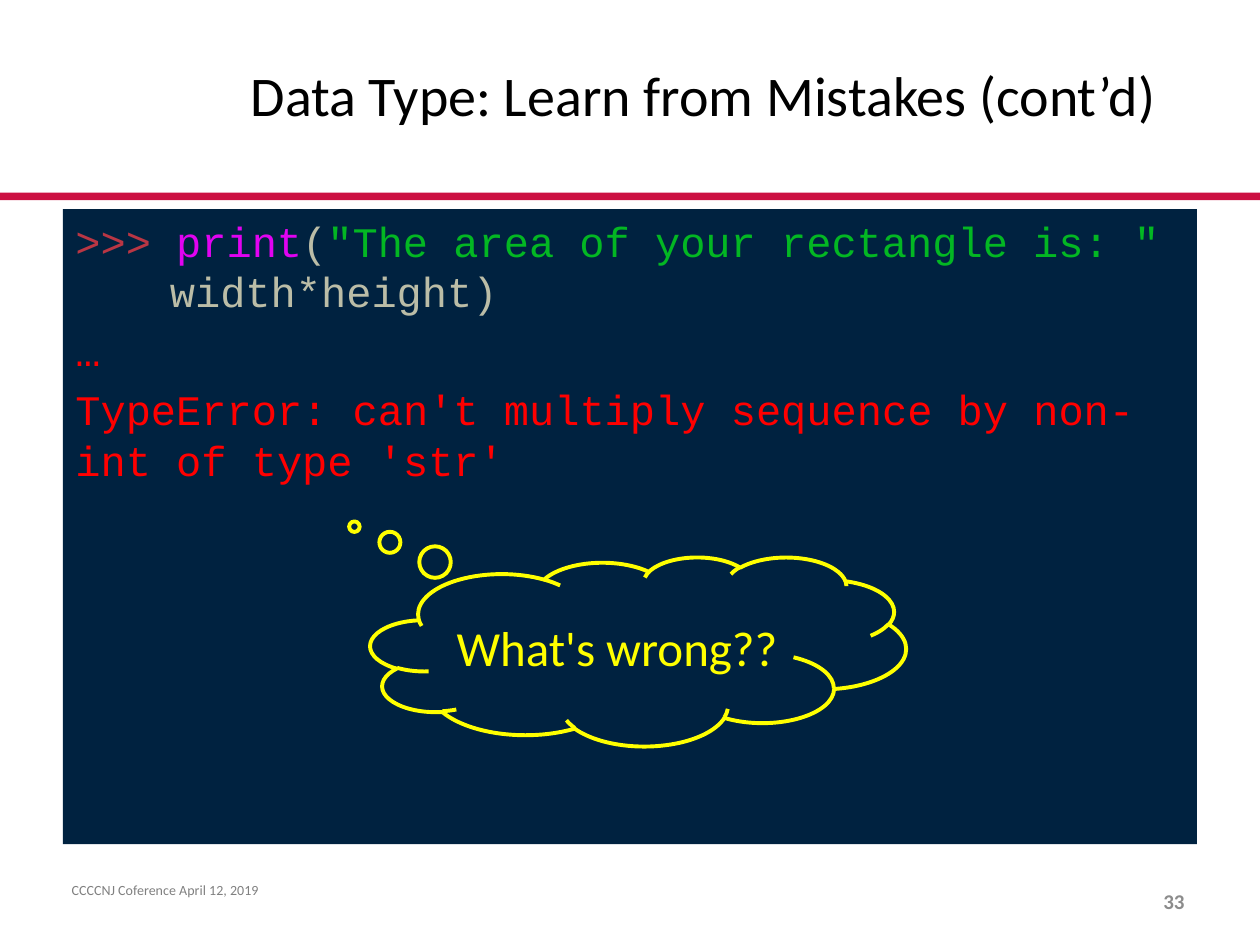
from pptx import Presentation
from pptx.dml.color import RGBColor
from pptx.enum.shapes import MSO_SHAPE
from pptx.enum.text import MSO_ANCHOR, PP_ALIGN
from pptx.util import Inches, Pt

BLACK = RGBColor(0x00, 0x00, 0x00)
CRIMSON = RGBColor(0xCC, 0x10, 0x42)
NAVY = RGBColor(0x00, 0x22, 0x40)
PROMPT = RGBColor(0xB9, 0x36, 0x44)
MAGENTA = RGBColor(0xE1, 0x03, 0xF1)
SAND = RGBColor(0xBB, 0xBD, 0xA7)
GREEN = RGBColor(0x03, 0xB7, 0x23)
RED = RGBColor(0xFF, 0x00, 0x00)
YELLOW = RGBColor(0xFF, 0xFF, 0x00)
GREY = RGBColor(0x80, 0x80, 0x80)
NUMBER_GREY = RGBColor(0x8C, 0x8C, 0x8C)

HANGING = 0.75
# Each line: hanging indent, then (text, colour) runs
CONSOLE = [
    (HANGING, [(">>> ", PROMPT), ("print", MAGENTA), ("(", SAND),
               ('"The area of your rectangle is: " ', GREEN),
               ("width*height)", SAND)]),
    (HANGING, [("…", RED)]),
    (0, [("TypeError: can't multiply sequence by non-int of type 'str'", RED)]),
]

# Text, box, anchor, alignment, font
LABELS = [
    ("Data Type: Learn from Mistakes (cont’d)", (1.89, 0.3, 7.99, 0.89),
     MSO_ANCHOR.MIDDLE, PP_ALIGN.LEFT, {"size": Pt(32)}, BLACK),
    ("CCCCNJ Coference April 12, 2019", (0.47, 6.95, 6.69, 0.4),
     MSO_ANCHOR.TOP, PP_ALIGN.JUSTIFY, {"size": Pt(8)}, GREY),
    ("33", (7.17, 6.95, 2.33, 0.4),
     MSO_ANCHOR.MIDDLE, PP_ALIGN.RIGHT, {"size": Pt(12), "bold": True}, NUMBER_GREY),
]


def add_run(paragraph, words, color, **font):
    run = paragraph.add_run()
    run.text = words
    for key, value in ({"name": "Calibri"} | font).items():
        setattr(run.font, key, value)
    run.font.color.rgb = color


def add_panel(slide, kind, box, fill=None):
    """Add a flat, lineless shape, filled only when a colour is given."""
    panel = slide.shapes.add_shape(kind, *map(Inches, box))
    panel.shadow.inherit = False
    panel.line.fill.background()
    if fill is None:
        panel.fill.background()
    else:
        panel.fill.solid()
        panel.fill.fore_color.rgb = fill
    return panel


def set_frame(frame, anchor):
    frame.word_wrap = True
    frame.vertical_anchor = anchor
    return frame


def add_console(slide):
    console = add_panel(slide, MSO_SHAPE.RECTANGLE, (0.5, 1.66, 9, 5.04), NAVY)
    frame = set_frame(console.text_frame, MSO_ANCHOR.TOP)
    for index, (hanging, runs) in enumerate(CONSOLE):
        line = frame.add_paragraph() if index else frame.paragraphs[0]
        line.alignment = PP_ALIGN.LEFT
        line.space_before = Pt(5 if index else 0)
        properties = line._p.get_or_add_pPr()
        properties.set("marL", str(Inches(hanging)))
        properties.set("indent", str(-Inches(hanging)))
        for words, color in runs:
            add_run(line, words, color, name="Courier New", size=Pt(24))


def add_label(slide, words, box, anchor, alignment, font, color):
    label = slide.shapes.add_textbox(*map(Inches, box))
    paragraph = set_frame(label.text_frame, anchor).paragraphs[0]
    paragraph.alignment = alignment
    add_run(paragraph, words, color, **font)


def add_thought(slide):
    cloud = add_panel(slide, MSO_SHAPE.CLOUD_CALLOUT, (2.94, 4.42, 4.25, 1.5))
    cloud.adjustments[0] = -0.53
    cloud.adjustments[1] = -0.66
    cloud.line.color.rgb = YELLOW
    cloud.line.width = Pt(2.25)
    paragraph = set_frame(cloud.text_frame, MSO_ANCHOR.MIDDLE).paragraphs[0]
    paragraph.alignment = PP_ALIGN.LEFT
    add_run(paragraph, "What's wrong??", YELLOW, size=Pt(28))


def main():
    deck = Presentation()
    deck.slide_width, deck.slide_height = Inches(10), Inches(7.5)
    slide = deck.slides.add_slide(deck.slide_layouts[6])
    add_panel(slide, MSO_SHAPE.RECTANGLE, (0, 1.53, 10, 0.06), CRIMSON)
    add_console(slide)
    for label in LABELS:
        add_label(slide, *label)
    add_thought(slide)
    deck.save("out.pptx")


if __name__ == "__main__":
    main()
